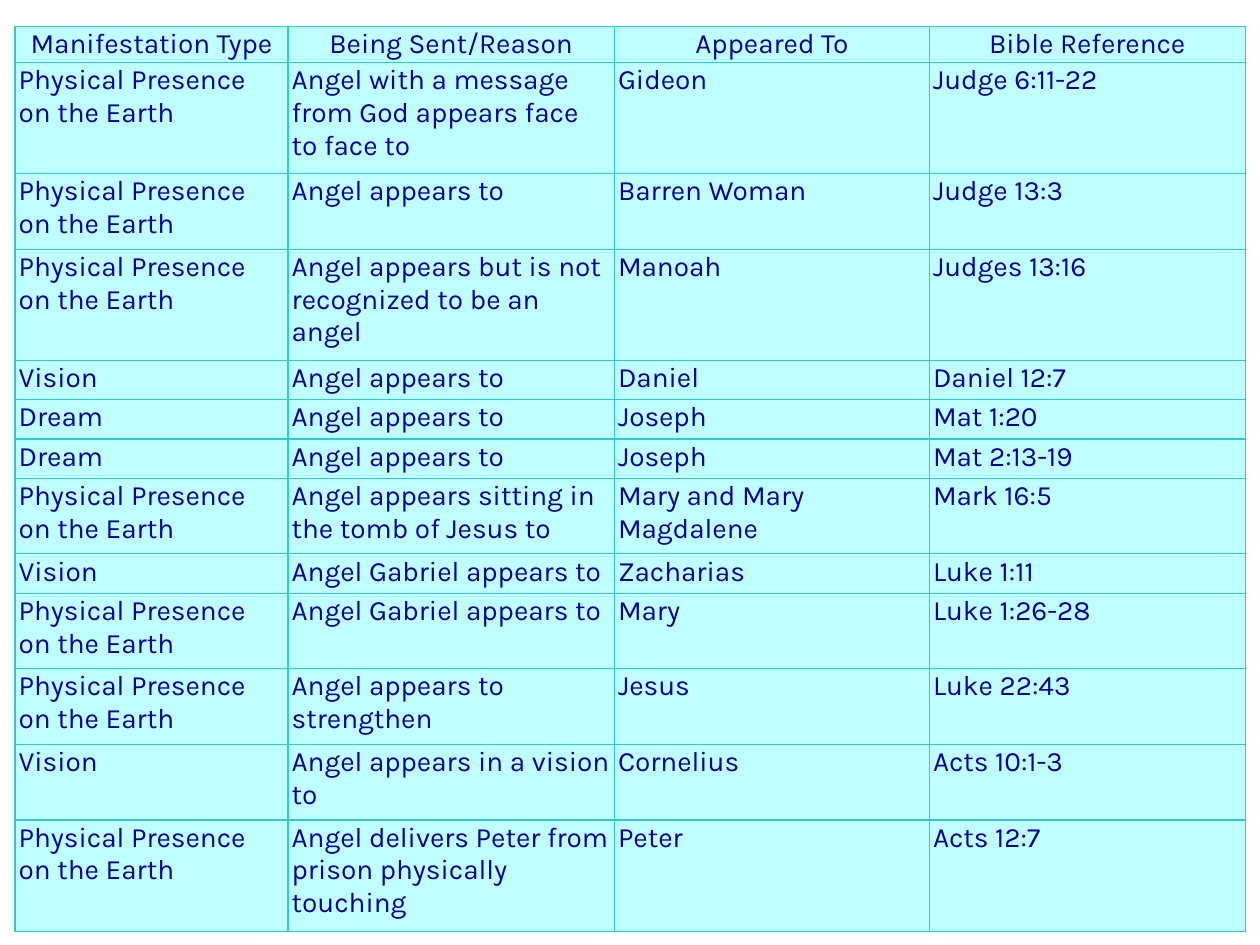
from typing import NamedTuple

from lxml import etree
from pptx import Presentation
from pptx.dml.color import RGBColor
from pptx.enum import text
from pptx.oxml import ns
from pptx.util import Pt

INK, FILL, EDGE = "010199", "C0FFFF", "2ECBCB"
LEFT, TOP = 8.6, 15.1
COLS = (156, 186.5, 180, 180.5)
HEAD = 20.6
TALL = {1: 22.5, 2: 43.2, 3: 63.5}  # row height by line count
EARTH = "Physical Presence on the Earth"


class Visit(NamedTuple):
    lines: int
    kind: str
    reason: str
    who: str
    verse: str


TITLES = ("Manifestation Type", "Being Sent/Reason", "Appeared To", "Bible Reference")
VISITS = (
    Visit(3, EARTH, "Angel with a message from God appears face to face to",
          "Gideon", "Judge 6:11-22"),
    Visit(2, EARTH, "Angel appears to", "Barren Woman", "Judge 13:3"),
    Visit(3, EARTH, "Angel appears but is not recognized to be an angel",
          "Manoah", "Judges 13:16"),
    Visit(1, "Vision", "Angel appears to", "Daniel", "Daniel 12:7"),
    Visit(1, "Dream", "Angel appears to", "Joseph", "Mat 1:20"),
    Visit(1, "Dream", "Angel appears to", "Joseph", "Mat 2:13-19"),
    Visit(2, EARTH, "Angel appears sitting in the tomb of Jesus to",
          "Mary and Mary Magdalene", "Mark 16:5"),
    Visit(1, "Vision", "Angel Gabriel appears to", "Zacharias", "Luke 1:11"),
    Visit(2, EARTH, "Angel Gabriel appears to", "Mary", "Luke 1:26-28"),
    Visit(2, EARTH, "Angel appears to strengthen", "Jesus", "Luke 22:43"),
    Visit(2, "Vision", "Angel appears in a vision to", "Cornelius", "Acts 10:1-3"),
    Visit(3, EARTH, "Angel delivers Peter from prison physically touching",
          "Peter", "Acts 12:7"),
)


def color(code: str) -> RGBColor:
    return RGBColor.from_string(code)


def frame(cell) -> None:
    """Draw a thin line on all four sides of a cell."""
    props = cell._tc.get_or_add_tcPr()
    for spot, side in enumerate(("lnL", "lnR", "lnT", "lnB")):
        line = etree.Element(ns.qn(f"a:{side}"), w=str(Pt(0.75)))
        solid = etree.SubElement(line, ns.qn("a:solidFill"))
        etree.SubElement(solid, ns.qn("a:srgbClr"), val=EDGE)
        props.insert(spot, line)


def write(cell, words: str, align: text.PP_ALIGN) -> None:
    """Style one cell and add its text."""
    cell.margin_left = cell.margin_right = Pt(2.1)
    cell.margin_top = cell.margin_bottom = Pt(0.9)
    cell.fill.solid()
    cell.fill.fore_color.rgb = color(FILL)
    frame(cell)
    para = cell.text_frame.paragraphs[0]
    para.alignment = align
    run = para.add_run()
    run.text = words
    run.font.name = "Karla"
    run.font.size = Pt(16)
    run.font.bold = False
    run.font.color.rgb = color(INK)


def main() -> None:
    deck = Presentation()
    deck.slide_width, deck.slide_height = Pt(720), Pt(540)
    slide = deck.slides.add_slide(deck.slide_layouts[6])

    # Table grid
    highs = [HEAD] + [TALL[visit.lines] for visit in VISITS]
    grid = slide.shapes.add_table(
        len(highs), len(COLS), Pt(LEFT), Pt(TOP), Pt(sum(COLS)), Pt(sum(highs))
    ).table
    grid.first_row = grid.horz_banding = False
    for col, wide in zip(grid.columns, COLS):
        col.width = Pt(wide)
    for row, high in zip(grid.rows, highs):
        row.height = Pt(high)

    # Header row, then one row per visit
    rows = [TITLES] + [visit[1:] for visit in VISITS]
    for place, (row, texts) in enumerate(zip(grid.rows, rows)):
        align = text.PP_ALIGN.LEFT if place else text.PP_ALIGN.CENTER
        for cell, words in zip(row.cells, texts):
            write(cell, words, align)

    deck.save("out.pptx")


if __name__ == "__main__":
    main()
